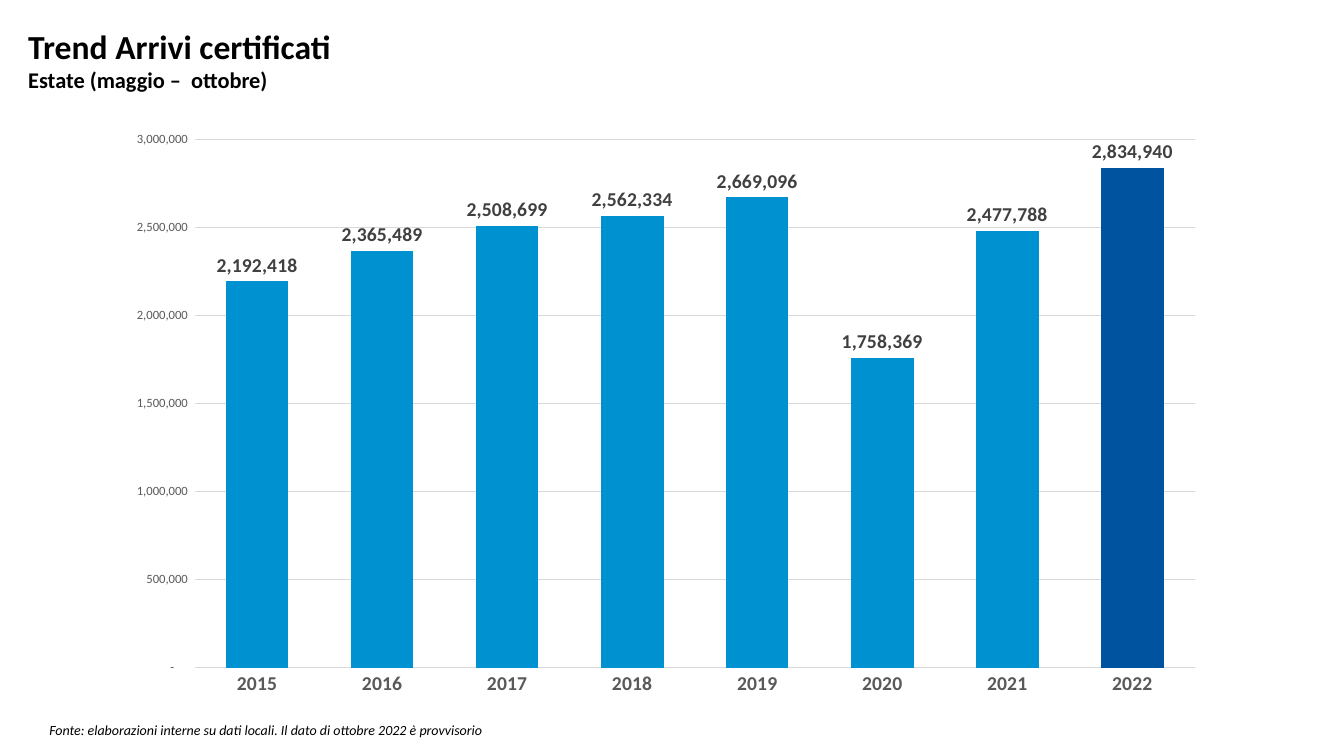
from dataclasses import dataclass

from pptx import Presentation
from pptx import util as u
from pptx.chart.data import CategoryChartData
from pptx.dml.color import RGBColor
from pptx.enum import chart as charts, text


@dataclass(frozen=True)
class Theme:
    font: str = "Calibri"
    black: str = "000000"
    label: str = "404040"
    axis: str = "595959"
    grid: str = "D9D9D9"
    bar: str = "0092D0"
    highlight: str = "00539F"
    title_size: int = 24
    subtitle_size: int = 16
    chart_size: int = 14
    scale_size: int = 9
    note_size: int = 10


THEME = Theme()
ARRIVALS = {
    "2015": 2192418,
    "2016": 2365489,
    "2017": 2508699,
    "2018": 2562334,
    "2019": 2669096,
    "2020": 1758369,
    "2021": 2477788,
    "2022": 2834940,
}
NUMBER_FORMAT = r'_-* #,##0_-;\-* #,##0_-;_-* "-"??_-;_-@_'


def style_font(font, size, color, bold=False, italic=False):
    font.name = THEME.font
    font.size = u.Pt(size)
    font.bold = bold
    font.italic = italic
    font.color.rgb = RGBColor.from_string(color)


def style_line(line, color):
    line.color.rgb = RGBColor.from_string(color)
    line.width = u.Pt(0.75)


def add_heading(slide, left, top, width, height):
    title = slide.shapes.title
    title.left, title.top, title.width, title.height = left, top, width, height
    frame = title.text_frame
    frame.word_wrap = True
    frame.auto_size = text.MSO_AUTO_SIZE.NONE
    frame.vertical_anchor = text.MSO_ANCHOR.MIDDLE
    frame.text = "Trend Arrivi certificati\nEstate (maggio –  ottobre)"
    sizes = (THEME.title_size, THEME.subtitle_size)
    for paragraph, size in zip(frame.paragraphs, sizes):
        paragraph.alignment = text.PP_ALIGN.LEFT
        paragraph.line_spacing = 1.0
        paragraph.space_before = u.Pt(0)
        style_font(paragraph.runs[0].font, size, THEME.black, bold=True)


def add_source_note(slide, left, top, width, height):
    frame = slide.shapes.add_textbox(left, top, width, height).text_frame
    frame.word_wrap = True
    frame.auto_size = text.MSO_AUTO_SIZE.SHAPE_TO_FIT_TEXT
    frame.text = "Fonte: elaborazioni interne su dati locali. Il dato di ottobre 2022 è provvisorio"
    paragraph = frame.paragraphs[0]
    paragraph.alignment = text.PP_ALIGN.JUSTIFY
    paragraph.line_spacing = 1.07
    paragraph.space_after = u.Pt(8)
    style_font(paragraph.runs[0].font, THEME.note_size, THEME.black, italic=True)


def format_axes(chart):
    years = chart.category_axis
    years.major_tick_mark = charts.XL_TICK_MARK.NONE
    style_font(years.tick_labels.font, THEME.chart_size, THEME.axis, bold=True)
    style_line(years.format.line, THEME.grid)

    scale = chart.value_axis
    scale.minimum_scale = 0
    scale.maximum_scale = 3000000
    scale.major_unit = 500000
    scale.major_tick_mark = charts.XL_TICK_MARK.NONE
    scale.format.line.fill.background()
    style_line(scale.major_gridlines.format.line, THEME.grid)
    style_font(scale.tick_labels.font, THEME.scale_size, THEME.axis)
    scale.tick_labels.number_format = NUMBER_FORMAT
    scale.tick_labels.number_format_is_linked = False


def format_bars(plot):
    plot.gap_width = 100
    plot.overlap = -27
    plot.vary_by_categories = False
    series = plot.series[0]
    series.invert_if_negative = False
    latest = series.points[len(ARRIVALS) - 1]
    for bar, color in ((series, THEME.bar), (latest, THEME.highlight)):
        bar.format.fill.solid()
        bar.format.fill.fore_color.rgb = RGBColor.from_string(color)

    labels = series.data_labels
    labels.show_value = True
    labels.position = charts.XL_LABEL_POSITION.OUTSIDE_END
    labels.number_format = "#,##0"
    labels.number_format_is_linked = False
    style_font(labels.font, THEME.chart_size, THEME.label, bold=True)


def add_arrivals_chart(slide, left, top, width, height):
    data = CategoryChartData()
    data.categories = list(ARRIVALS)
    data.add_series("Series 1", list(ARRIVALS.values()))
    chart = slide.shapes.add_chart(
        charts.XL_CHART_TYPE.COLUMN_CLUSTERED, left, top, width, height, data
    ).chart
    chart.has_title = False
    chart.has_legend = False
    style_font(chart.font, THEME.note_size, THEME.black)
    format_axes(chart)
    format_bars(chart.plots[0])


def main():
    presentation = Presentation()
    presentation.slide_width = u.Inches(13.33)
    presentation.slide_height = u.Inches(7.5)
    title_only = presentation.slide_layouts[5]
    slide = presentation.slides.add_slide(title_only)
    add_heading(slide, u.Inches(0.18), u.Inches(0.22), u.Inches(7.09), u.Inches(0.74))
    add_source_note(slide, u.Inches(0.39), u.Inches(7.1), u.Inches(10.08), u.Inches(0.27))
    add_arrivals_chart(slide, u.Inches(1.11), u.Inches(1.19), u.Inches(10.96), u.Inches(5.83))
    presentation.save("out.pptx")


if __name__ == "__main__":
    main()
